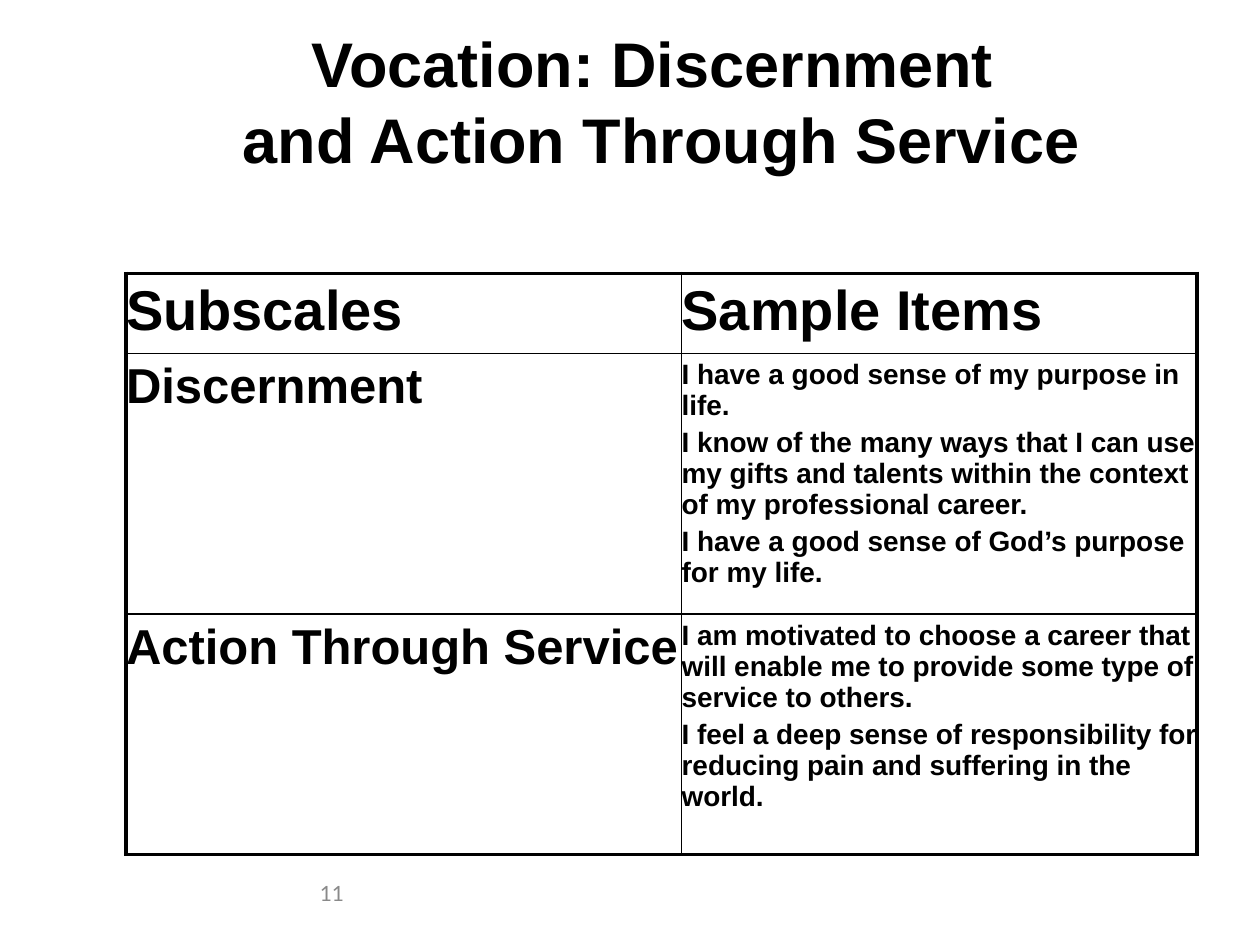
from dataclasses import dataclass

from lxml.etree import SubElement
from pptx import Presentation
from pptx.dml.color import RGBColor as Color
from pptx.enum.text import MSO_ANCHOR as Anchor, PP_ALIGN as Align
from pptx.oxml.ns import qn
from pptx.util import Inches, Pt


@dataclass(frozen=True)
class Theme:
    ink: str = "000000"
    muted: str = "898989"
    paper: str = "FFFFFF"
    font: str = "Arial"
    number_font: str = "Lato"
    title: int = 36
    header: int = 32
    subscale: int = 28
    item: int = 16
    number: int = 12
    item_gap: float = 3.2
    frame_line: float = 2.25
    grid_line: float = 1


THEME = Theme()

COLUMNS = [4.41, 4.09]
ROWS = [0.63, 2.07, 1.91]
SUBSCALES = [
    ("Discernment", [
        "I have a good sense of my purpose in life.",
        "I know of the many ways that I can use my gifts and talents within "
        "the context of my professional career.",
        "I have a good sense of God’s purpose for my life.",
    ]),
    ("Action Through Service", [
        "I am motivated to choose a career that will enable me to provide "
        "some type of service to others.",
        "I feel a deep sense of responsibility for reducing pain and "
        "suffering in the world.",
    ]),
]


def write(frame, paragraphs, size, font=THEME.font, color=THEME.ink,
          bold=True, align=Align.LEFT, gap=0):
    for index, lines in enumerate(paragraphs):
        para = frame.add_paragraph() if index else frame.paragraphs[0]
        para.alignment = align
        para.space_before = Pt(gap if index else 0)
        for number, line in enumerate(lines.split("\n")):
            if number:
                para.add_line_break()
            span = para.add_run()
            span.text = line
            span.font.size = Pt(size)
            span.font.name = font
            span.font.bold = bold
            span.font.color.rgb = Color.from_string(color)


class Page:
    def __init__(self, deck, theme):
        self.theme = theme
        self.slide = deck.slides.add_slide(deck.slide_layouts[6])

    def text(self, left, top, width, height, content, size, **style):
        box = self.slide.shapes.add_textbox(
            Inches(left), Inches(top), Inches(width), Inches(height))
        box.text_frame.word_wrap = True
        box.text_frame.vertical_anchor = Anchor.MIDDLE
        write(box.text_frame, [content], size, **style)

    def table(self, left, top, columns, rows):
        table = self.slide.shapes.add_table(
            len(rows), len(columns), Inches(left), Inches(top),
            Inches(sum(columns)), Inches(sum(rows))).table
        table.first_row = table.horz_banding = False
        for column, width in zip(table.columns, columns):
            column.width = Inches(width)
        for row, height in zip(table.rows, rows):
            row.height = Inches(height)
        for row in range(len(rows)):
            for column in range(len(columns)):
                self.border(table.cell(row, column), {
                    "lnL": column == 0,
                    "lnR": column == len(columns) - 1,
                    "lnT": row == 0,
                    "lnB": row == len(rows) - 1,
                })
        return table

    def border(self, cell, outer_sides):
        properties = cell._tc.get_or_add_tcPr()
        for side, outer in outer_sides.items():
            width = self.theme.frame_line if outer else self.theme.grid_line
            line = SubElement(properties, qn(f"a:{side}"), w=str(int(Pt(width))))
            fill = SubElement(line, qn("a:solidFill"))
            SubElement(fill, qn("a:srgbClr"), val=self.theme.ink)

    def cell(self, table, row, column, paragraphs, size, **style):
        cell = table.cell(row, column)
        cell.margin_left = cell.margin_right = 0
        cell.margin_top = cell.margin_bottom = Inches(0.05)
        cell.fill.solid()
        cell.fill.fore_color.rgb = Color.from_string(self.theme.paper)
        write(cell.text_frame, paragraphs, size, **style)


def main():
    deck = Presentation()
    deck.slide_width, deck.slide_height = Inches(10), Inches(7.5)
    page = Page(deck, THEME)

    page.text(1, 0.17, 8.5, 1.25,
              "Vocation: Discernment \nand Action Through Service",
              THEME.title, align=Align.CENTER)

    table = page.table(1, 2.17, COLUMNS, ROWS)
    for column, heading in enumerate(["Subscales", "Sample Items"]):
        page.cell(table, 0, column, [heading], THEME.header)
    for row, (subscale, items) in enumerate(SUBSCALES, start=1):
        page.cell(table, row, 0, [subscale], THEME.subscale)
        page.cell(table, row, 1, items, THEME.item, gap=THEME.item_gap)

    page.text(0.5, 6.83, 2.33, 0.52, "11", THEME.number,
              font=THEME.number_font, color=THEME.muted, bold=False,
              align=Align.RIGHT)
    deck.save("out.pptx")


if __name__ == "__main__":
    main()
